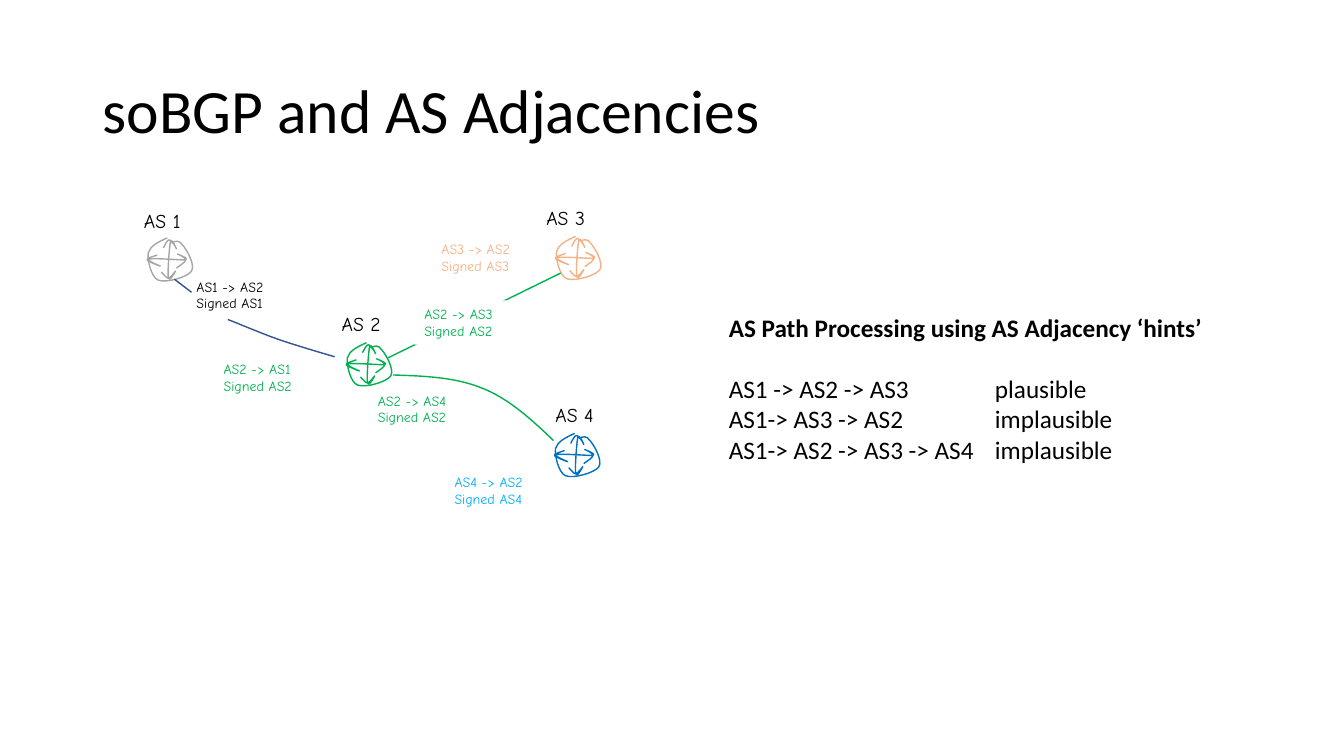
from dataclasses import dataclass

from lxml import etree
from pptx import Presentation
from pptx.dml.color import RGBColor
from pptx.enum.text import MSO_ANCHOR, MSO_AUTO_SIZE
from pptx.oxml.ns import qn
from pptx.util import Inches, Pt

MIDDLE, TOP = MSO_ANCHOR.MIDDLE, MSO_ANCHOR.TOP
FIXED, GROW = MSO_AUTO_SIZE.NONE, MSO_AUTO_SIZE.SHAPE_TO_FIT_TEXT

# The page is a grid of 1333 columns by 750 rows, 0.01 inch each
COLUMNS, ROWS = 1333, 750


def grid(count):
    return Inches(count / 100)


@dataclass(frozen=True)
class Theme:
    text_font: str = "Calibri"
    sketch_font: str = "Comic Neue"
    title_size: int = 44
    body_size: int = 18
    name_size: int = 14
    label_size: int = 10
    line_width: int = 1
    black: str = "000000"
    white: str = "FFFFFF"
    gray: str = "A6A6A6"
    green: str = "00B050"
    orange: str = "F4B183"
    blue: str = "0070C0"
    sky: str = "00B0F0"
    navy: str = "325491"


THEME = Theme()

# Router strokes: a start, then cubic curves (control, control, end)
ROUTER_STROKES = [
    # Hand-drawn ring
    [(20, 0), (11, 4), (3, 8), (1, 15), (0, 22), (4, 39), (11, 42),
     (19, 45), (40, 39), (44, 33), (48, 27), (39, 11), (35, 7),
     (32, 2), (28, 3), (24, 5)],
    # Horizontal double arrow
    [(10, 17), (5, 19), (-1, 20), (0, 22), (0, 23), (12, 28), (13, 28),
     (13, 28), (-2, 22), (2, 21), (7, 20), (34, 22), (38, 22),
     (43, 21), (30, 16), (30, 16), (30, 16), (38, 19), (38, 22),
     (38, 24), (33, 27), (29, 30)],
    # Vertical double arrow
    [(16, 10), (18, 6), (20, 2), (22, 2), (24, 2), (29, 10), (29, 11),
     (29, 11), (24, -1), (23, 4), (22, 9), (20, 35), (21, 40),
     (22, 45), (28, 33), (28, 33), (28, 33), (23, 40), (21, 40),
     (19, 40), (17, 37), (14, 34)],
]

# Router: name, ring origin, colour, name box (left, top, width)
ROUTERS = [
    ("AS 1", (146, 236), THEME.gray, (133, 202, 67)),
    ("AS 2", (343.5, 340), THEME.green, (329, 305, 75)),
    ("AS 3", (551, 234.5), THEME.orange, (532, 199, 72)),
    ("AS 4", (550, 430), THEME.blue, (541, 395, 71)),
]

# Link: nodes, colour, whether the nodes form cubic curves
LINKS = [
    ([(173, 277), (190, 290)], THEME.navy, False),
    ([(226, 317), (244, 324), (262, 332), (280, 338),
      (298, 344), (315, 349), (332, 354)], THEME.navy, True),
    ([(385, 355), (444, 326), (556, 271)], THEME.green, False),
    ([(390, 372), (420, 373), (451, 374), (478, 385),
      (504, 395), (527, 416), (549, 437)], THEME.green, True),
]

# Signed adjacency: from, to, colour, fill, box (left, top, width)
LABELS_UNDER_LINKS = [
    (1, 2, THEME.black, None, (185, 271, 110)),
    (2, 4, THEME.green, THEME.white, (365, 384, 113)),
]
LABELS_OVER_LINKS = [
    (2, 1, THEME.green, THEME.white, (212, 353, 110)),
    (2, 3, THEME.green, THEME.white, (411, 298, 113)),
    (3, 2, THEME.orange, THEME.white, (428, 234, 113)),
    (4, 2, THEME.sky, THEME.white, (441, 465, 113)),
]

HINTS_TITLE = "AS Path Processing using AS Adjacency ‘hints’"
PATH_HINTS = [
    ("AS1 -> AS2 -> AS3", "plausible"),
    ("AS1-> AS3 -> AS2", "implausible"),
    ("AS1-> AS2 -> AS3 -> AS4", "implausible"),
]
VERDICT_COLUMN = 264


def bend(stroke):
    """Turn each three line segments into one cubic curve."""
    outline = stroke._element.find(".//" + qn("a:path"))
    segments = outline.findall(qn("a:lnTo"))
    for index in range(0, len(segments), 3):
        curve = etree.SubElement(outline, qn("a:cubicBezTo"))
        for segment in segments[index:index + 3]:
            curve.append(segment[0])
            outline.remove(segment)


def add_stroke(shapes, nodes, color, curved=True):
    spots = [(grid(x), grid(y)) for x, y in nodes]
    builder = shapes.build_freeform(*spots[0], scale=1.0)
    builder.add_line_segments(spots[1:], close=False)
    stroke = builder.convert_to_shape()
    if curved:
        bend(stroke)
    stroke.shadow.inherit = False
    stroke.fill.background()
    stroke.line.color.rgb = RGBColor.from_string(color)
    stroke.line.width = Pt(THEME.line_width)


def add_text(page, place, lines, font, size, color, fill=None,
             anchor=TOP, wrap=False):
    box = page.shapes.add_textbox(*map(grid, place))
    if fill:
        box.fill.solid()
        box.fill.fore_color.rgb = RGBColor.from_string(fill)
    frame = box.text_frame
    frame.word_wrap = wrap
    frame.auto_size = FIXED if wrap else GROW
    frame.vertical_anchor = anchor
    frame.text = "\n".join(lines)
    for para in frame.paragraphs:
        para.font.name = font
        para.font.size = Pt(size)
        para.font.color.rgb = RGBColor.from_string(color)
    return frame.paragraphs


def add_tab_stop(para, column):
    tabs = etree.Element(qn("a:tabLst"))
    etree.SubElement(tabs, qn("a:tab"), pos=str(grid(column)), algn="l")
    # Tab stops precede the default run properties
    para._p.get_or_add_pPr().insert(0, tabs)


def add_router(page, origin, color):
    left, top = origin
    router = page.shapes.add_group_shape()
    for nodes in ROUTER_STROKES:
        placed = [(left + x, top + y) for x, y in nodes]
        add_stroke(router.shapes, placed, color)


def add_adjacency(page, source, target, color, fill, place):
    lines = [f"AS{source} -> AS{target}", f"Signed AS{source}"]
    add_text(page, (*place, 44), lines,
             THEME.sketch_font, THEME.label_size, color, fill)


def add_path_hints(page):
    lines = [HINTS_TITLE] + ["\t".join(hint) for hint in PATH_HINTS]
    heading, *rows = add_text(page, (713, 305, 493, 192), lines,
                              THEME.text_font, THEME.body_size,
                              THEME.black, wrap=True)
    heading.font.bold = True
    heading.space_after = Pt(22)
    for row in rows:
        add_tab_stop(row, VERDICT_COLUMN)


def main():
    deck = Presentation()
    deck.slide_width, deck.slide_height = grid(COLUMNS), grid(ROWS)
    page = deck.slides.add_slide(deck.slide_layouts[6])

    # Title
    title = add_text(page, (92, 40, 1150, 145), ["soBGP and AS Adjacencies"],
                     THEME.text_font, THEME.title_size, THEME.black,
                     anchor=MIDDLE, wrap=True)
    title[0].line_spacing = 0.9

    # Routers and their names
    for _, origin, color, _ in ROUTERS:
        add_router(page, origin, color)
    for name, _, _, place in ROUTERS:
        add_text(page, (*place, 34), [name],
                 THEME.sketch_font, THEME.name_size, THEME.black)

    # Links and signed adjacencies
    for adjacency in LABELS_UNDER_LINKS:
        add_adjacency(page, *adjacency)
    for link in LINKS:
        add_stroke(page.shapes, *link)
    for adjacency in LABELS_OVER_LINKS:
        add_adjacency(page, *adjacency)

    # Path plausibility
    add_path_hints(page)
    deck.save("out.pptx")


if __name__ == "__main__":
    main()
